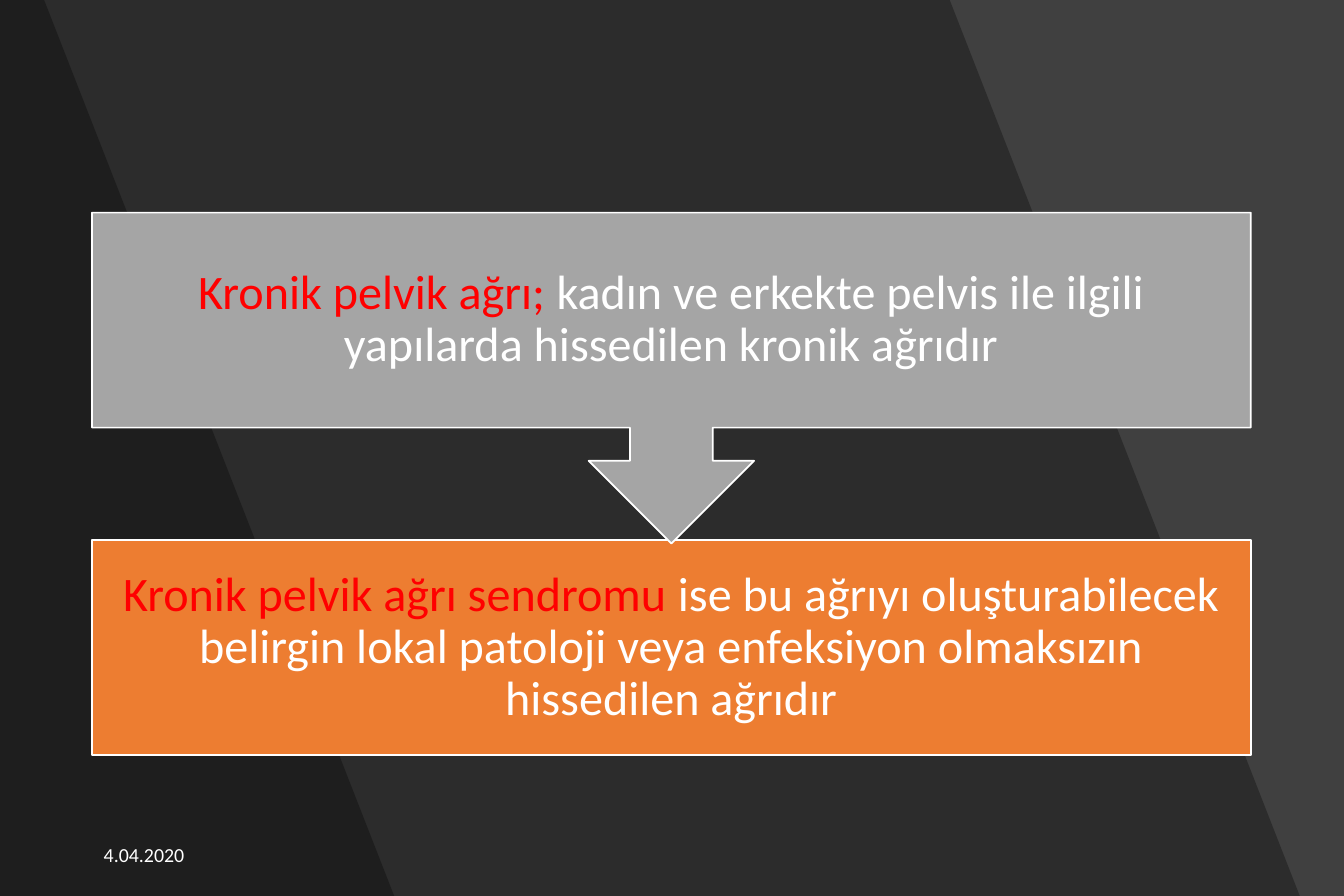
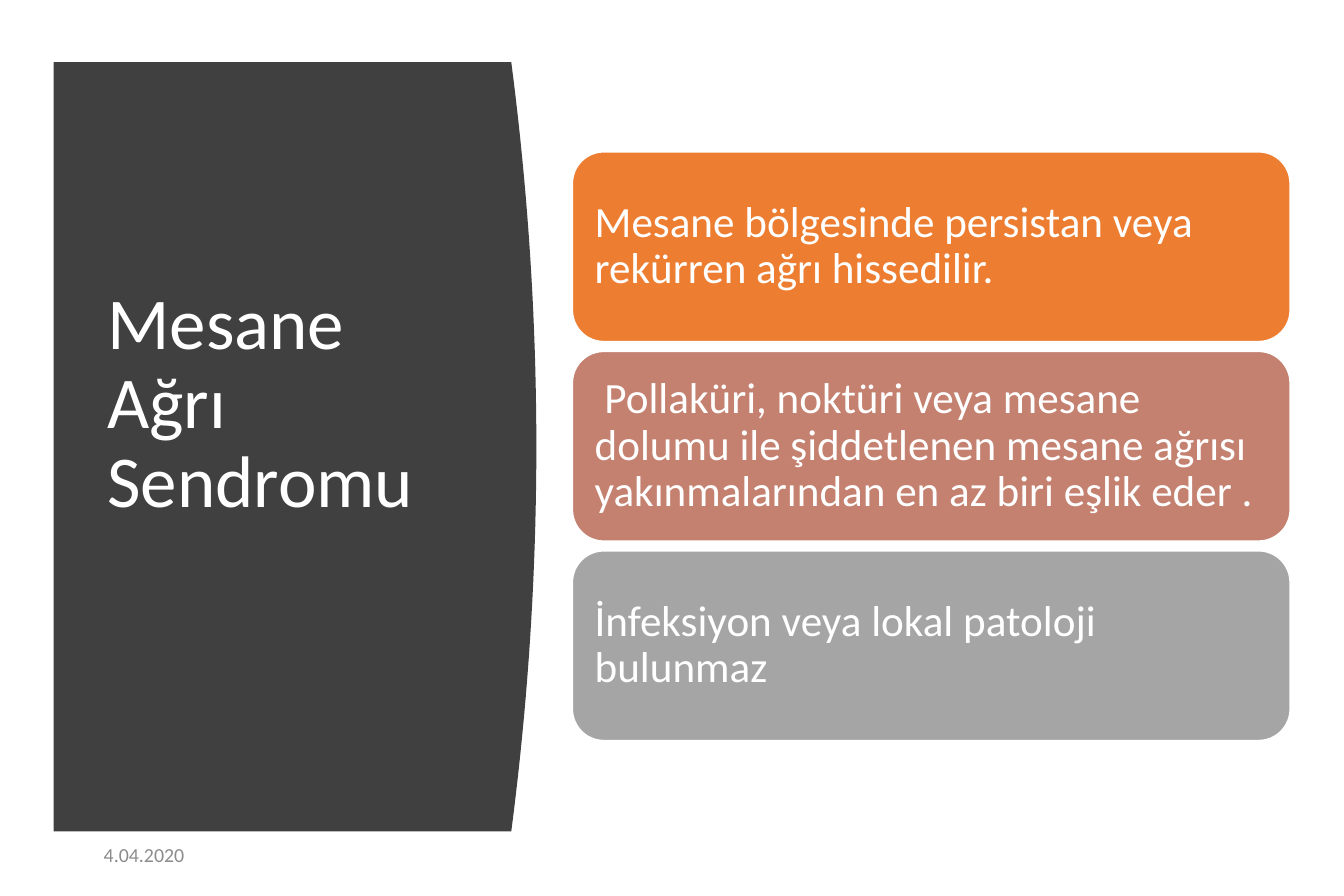
from dataclasses import dataclass

from lxml import etree
from pptx import Presentation
from pptx import util as u
from pptx.dml.color import RGBColor
from pptx.enum import shapes, text
from pptx.oxml.ns import qn

KIND = shapes.MSO_SHAPE
ALIGN = text.PP_ALIGN


@dataclass(frozen=True)
class Theme:
    font: str = "Calibri"
    white: str = "FFFFFF"
    black: str = "000000"
    dark: str = "404040"
    gray: str = "A5A5A5"
    pale: str = "8C8C8C"
    orange: str = "ED7D31"
    rose: str = "C48170"
    red: str = "FF0000"
    title: int = 44
    lead: int = 29
    body: int = 26
    small: int = 12


T = Theme()
WIDE, HIGH = 11.25, 7.5


def rgb(code):
    return RGBColor.from_string(code)


def apply(item, **values):
    for name, value in values.items():
        setattr(item, name, value)


def paint(shape, color, alpha=None):
    """Give a solid fill; alpha is the opacity in percent."""
    shape.shadow.inherit = False
    shape.fill.solid()
    shape.fill.fore_color.rgb = rgb(color)
    if alpha:
        tint = shape.fill._xPr.find(".//" + qn("a:srgbClr"))
        etree.SubElement(tint, qn("a:alpha"), val=str(alpha * 1000))


def write(shape, runs, size, align=ALIGN.LEFT, inset=None, space=None):
    """Fill one paragraph; runs is a list of (words, color)."""
    frame = shape.text_frame
    apply(frame, word_wrap=True, vertical_anchor=text.MSO_ANCHOR.MIDDLE)
    if inset is not None:
        sides = ("left", "top", "right", "bottom")
        apply(frame, **{f"margin_{side}": u.Inches(inset) for side in sides})
    para = frame.paragraphs[0]
    apply(para, alignment=align, line_spacing=space)
    for words, color in runs:
        run = para.add_run()
        run.text = words
        apply(run.font, name=T.font, size=u.Pt(size))
        run.font.color.rgb = rgb(color)


def label(slide, at, words, size, color, space=None):
    box = slide.shapes.add_textbox(*map(u.Inches, at))
    write(box, [(words, color)], size, space=space)


def card(slide, kind, at, fill, runs, size, align, inset):
    shape = slide.shapes.add_shape(kind, *map(u.Inches, at))
    paint(shape, fill)
    shape.line.color.rgb = rgb(T.white)
    shape.line.width = u.Pt(1)
    write(shape, runs, size, align, inset, 0.9)


def outline(slide, points, color, alpha=None):
    spots = [(u.Inches(x), u.Inches(y)) for x, y in points]
    path = slide.shapes.build_freeform(*spots[0])
    path.add_line_segments(spots[1:], close=True)
    shape = path.convert_to_shape()
    paint(shape, color, alpha)
    shape.line.fill.background()


def start(deck, back):
    slide = deck.slides.add_slide(deck.slide_layouts[6])
    slide.background.fill.solid()
    slide.background.fill.fore_color.rgb = rgb(back)
    return slide


def date(slide, color):
    label(slide, (0.77, 6.95, 2.53, 0.4), "4.04.2020", T.small, color)


def band(slide, right):
    """Shade the slide from its left edge to a slanted right edge."""
    slant = 2.93
    points = [(0, 0), (right - slant, 0), (right, HIGH), (0, HIGH)]
    outline(slide, points, T.black, 30)


def panel(slide):
    """Draw the title panel, its right side bowed as a parabola."""
    left, top, edge, bow, half, steps = 0.45, 0.52, 4.28, 0.21, 3.22, 40
    points = [(left, top)]
    for step in range(steps + 1):
        t = 2 * step / steps - 1
        points.append((edge + bow * (1 - t * t), top + half * (1 + t)))
    points.append((left, top + 2 * half))
    outline(slide, points, T.dark)


def define(deck):
    slide = start(deck, T.dark)
    for right in (10.88, 3.3):
        band(slide, right)
    left, width = 0.77, 9.7
    cards = [
        (KIND.RECTANGLE, 4.52, 1.8, T.orange, "Kronik pelvik ağrı sendromu",
         " ise bu ağrıyı oluşturabilecek belirgin lokal patoloji veya "
         "enfeksiyon olmaksızın hissedilen ağrıdır"),
        (KIND.DOWN_ARROW_CALLOUT, 1.78, 2.77, T.gray, "Kronik pelvik ağrı; ",
         "kadın ve erkekte pelvis ile ilgili yapılarda hissedilen "
         "kronik ağrıdır"),
    ]
    for kind, top, height, fill, term, rest in cards:
        card(slide, kind, (left, top, width, height), fill,
             [(term, T.red), (rest, T.white)], T.lead, ALIGN.CENTER, 0.23)
    date(slide, T.white)


def explain(deck):
    slide = start(deck, T.white)
    panel(slide)
    label(slide, (0.8, 1.11, 3.15, 4.56), "Mesane Ağrı Sendromu",
          T.title, T.white, 0.9)
    cards = [
        (T.orange,
         "Mesane bölgesinde persistan veya rekürren ağrı hissedilir."),
        (T.rose,
         " Pollaküri, noktüri veya mesane dolumu ile şiddetlenen mesane "
         "ağrısı yakınmalarından en az biri eşlik eder ."),
        (T.gray, "İnfeksiyon veya lokal patoloji bulunmaz"),
    ]
    for row, (fill, words) in enumerate(cards):
        card(slide, KIND.ROUNDED_RECTANGLE,
             (4.79, 1.27 + 1.67 * row, 6.01, 1.59), fill,
             [(words, T.white)], T.body, ALIGN.LEFT, 0.11)
    date(slide, T.pale)


def main():
    deck = Presentation()
    apply(deck, slide_width=u.Inches(WIDE), slide_height=u.Inches(HIGH))
    define(deck)
    explain(deck)
    deck.save("out.pptx")


if __name__ == "__main__":
    main()
